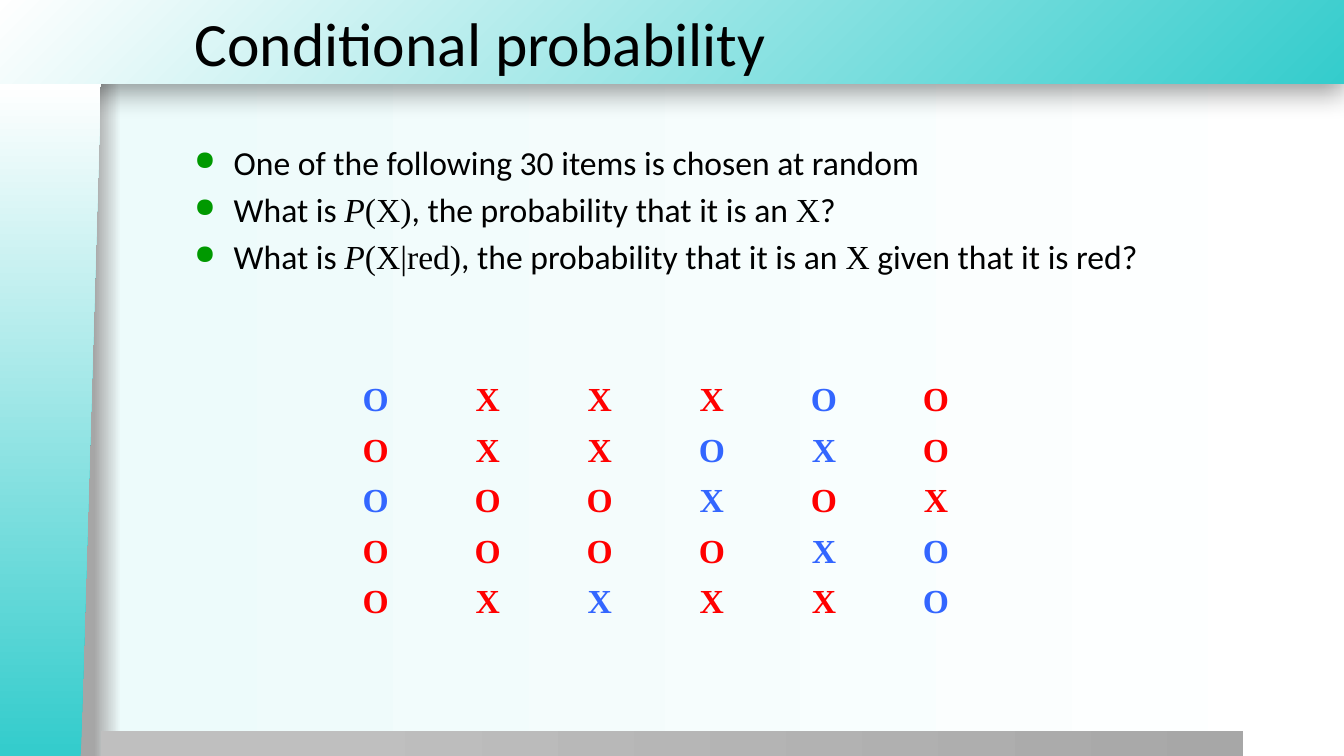
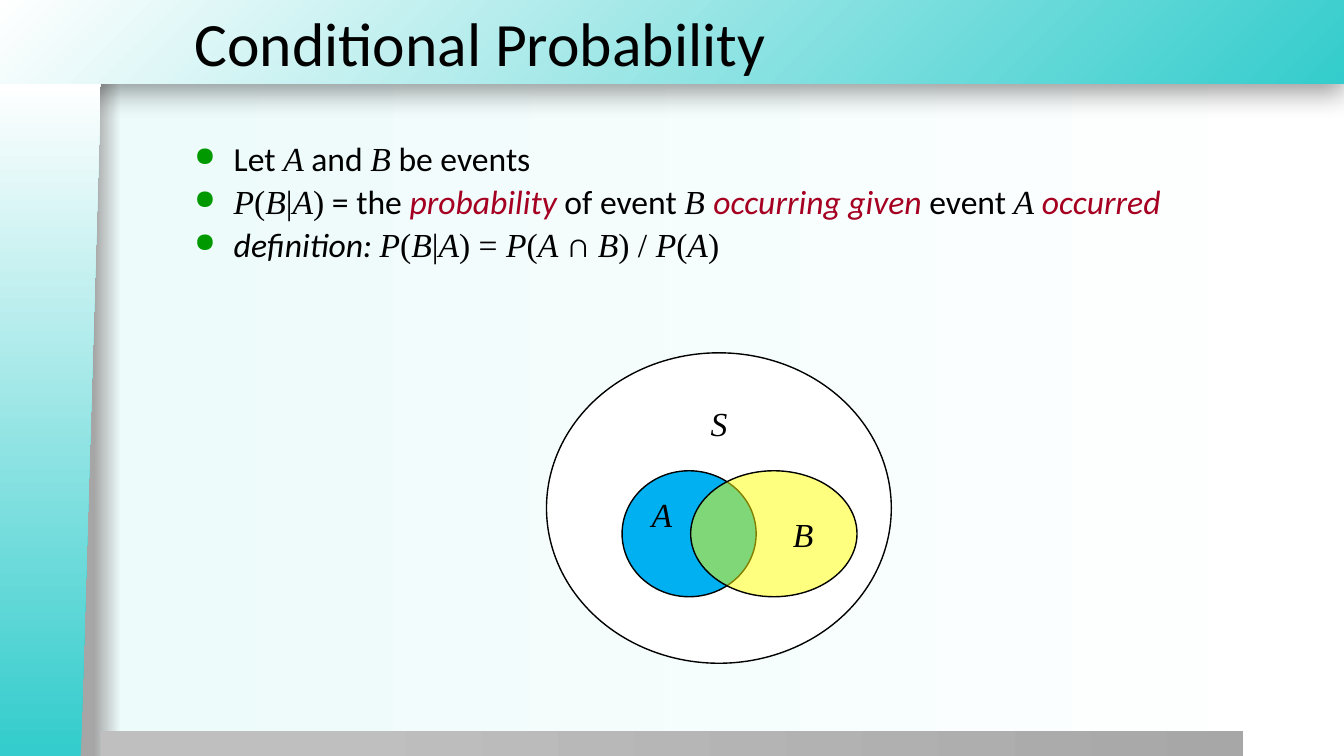
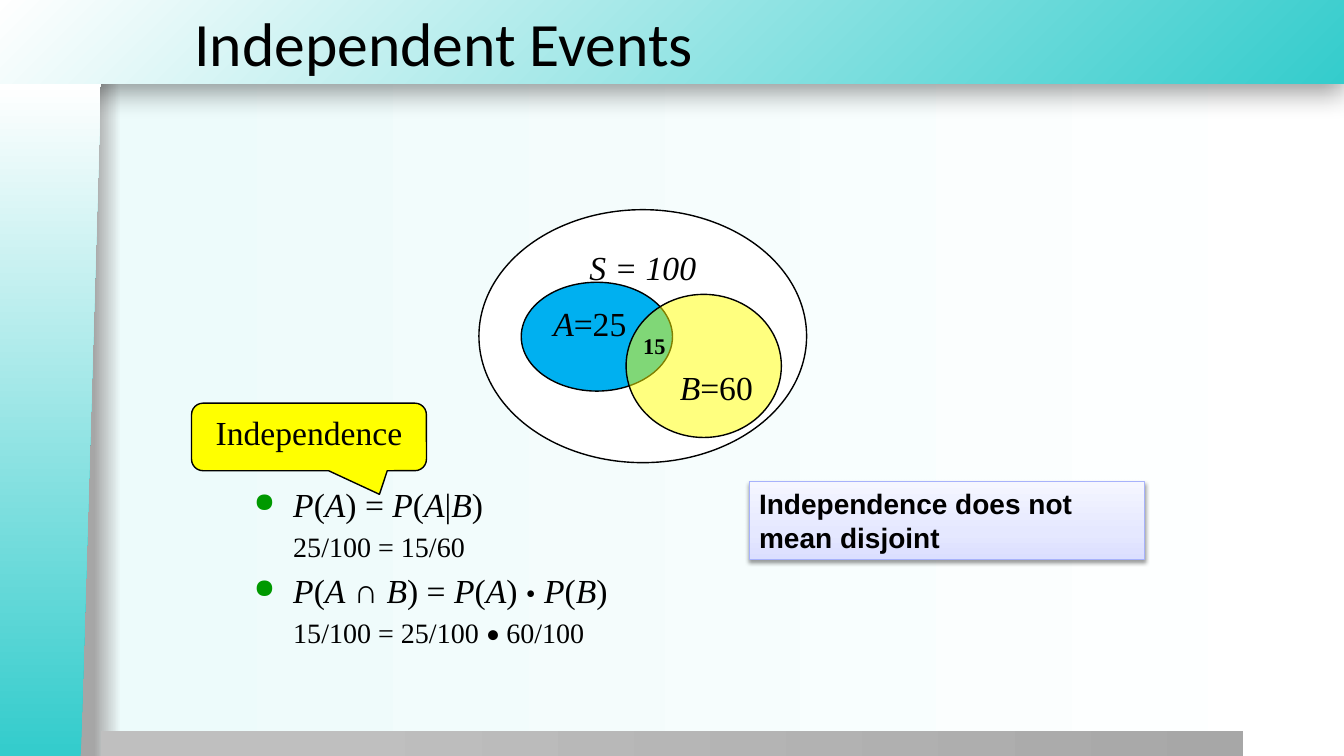
from dataclasses import dataclass
from itertools import groupby

from lxml.etree import SubElement
from pptx import Presentation
from pptx.dml.color import RGBColor
from pptx.enum.shapes import MSO_SHAPE as Kind
from pptx.enum.text import MSO_ANCHOR as Anchor, PP_ALIGN as Align
from pptx.oxml.ns import qn
from pptx.util import Inches, Pt

SANS, SERIF = "Calibri", "Times New Roman"
BLACK, WHITE, TEAL = "000000", "FFFFFF", "34CCCC"
RED, BLUE, WINE, GREEN = "FF0000", "3366FF", "A50021", "009900"
SKY, YELLOW = "00B0F0", "FFFF00"
INSETS = (0.1, 0.05, 0.1, 0.05)


@dataclass(frozen=True)
class Run:
    text: str
    font: str = SANS
    italic: bool = False
    color: str = BLACK
    size: float = 24
    bold: bool = False


@dataclass(frozen=True)
class Line:
    runs: list[Run]
    bullet: bool = True


@dataclass(frozen=True)
class Box:
    left: float
    top: float
    width: float
    height: float

    def place(self) -> tuple:
        return tuple(map(Inches, (self.left, self.top, self.width, self.height)))


@dataclass(frozen=True)
class Oval:
    box: Box
    fill: str
    label: list[Run]
    align: Align = Align.CENTER
    anchor: Anchor = Anchor.TOP
    insets: tuple = INSETS
    alpha: int = 100
    wrap: bool = True


# Run builders
def math(text: str, size: float = 24) -> list[Run]:
    """Capital letters are italic variables, all else is upright."""
    return [Run("".join(part), SERIF, upper, size=size)
            for upper, part in groupby(text, str.isupper)]


def serif(text: str, size: float = 24) -> Run:
    return Run(text, SERIF, size=size)


def slant(text: str) -> Run:
    return Run(text, SERIF, True)


def stress(text: str) -> Run:
    return Run(text, italic=True, color=WINE)


# Colour and XML helpers
def paint(text: str) -> RGBColor:
    return RGBColor.from_string(text)


def add(parent, tag: str, **attrs):
    return SubElement(parent, qn(tag), {key: str(val) for key, val in attrs.items()})


def blend(fill, root, stops: list, angle: int = 0, corner: bool = False) -> None:
    fill.gradient()
    node = root.find(".//" + qn("a:gradFill"))
    for child in list(node):
        node.remove(child)
    steps = add(node, "a:gsLst")
    for spot, color in stops:
        add(add(steps, "a:gs", pos=spot * 1000), "a:srgbClr", val=color)
    if corner:
        add(add(node, "a:path", path="circle"), "a:fillToRect", l=100000, t=100000)
    else:
        add(node, "a:lin", ang=angle * 60000, scaled=0)


def shade(shape, alpha: int, blur: float, dist: float) -> None:
    effect = shape.element.spPr.find(qn("a:effectLst"))
    outer = add(effect, "a:outerShdw", blurRad=int(Pt(blur)), dist=int(Pt(dist)),
                dir=5400000, algn="t", rotWithShape=0)
    add(add(outer, "a:srgbClr", val=BLACK), "a:alpha", val=alpha * 1000)


# Text
def fill_runs(para, runs: list[Run]) -> None:
    for item in runs:
        run = para.add_run()
        run.text = item.text
        font = run.font
        font.name, font.size = item.font, Pt(item.size)
        font.italic, font.bold = item.italic, item.bold
        font.color.rgb = paint(item.color)


def set_frame(frame, anchor: Anchor = Anchor.TOP, insets: tuple = INSETS,
              wrap: bool = True) -> None:
    frame.word_wrap, frame.vertical_anchor = wrap, anchor
    (frame.margin_left, frame.margin_top,
     frame.margin_right, frame.margin_bottom) = map(Inches, insets)


def write(slide, box: Box, runs: list[Run], anchor: Anchor = Anchor.TOP) -> None:
    frame = slide.shapes.add_textbox(*box.place()).text_frame
    set_frame(frame, anchor)
    fill_runs(frame.paragraphs[0], runs)


def add_body(slide, box: Box, lines: list[Line], spacing: float = 1.0) -> None:
    frame = slide.shapes.add_textbox(*box.place()).text_frame
    set_frame(frame)
    for index, line in enumerate(lines):
        para = frame.add_paragraph() if index else frame.paragraphs[0]
        fill_runs(para, line.runs)
        para.line_spacing = spacing
        props = para._p.get_or_add_pPr()
        indent = int(Inches(0.39))
        props.set("marL", str(indent))
        props.set("indent", str(-indent if line.bullet else 0))
        add(add(props, "a:spcBef"), "a:spcPct", val=20000)
        if line.bullet:
            add(add(props, "a:buClr"), "a:srgbClr", val=GREEN)
            add(props, "a:buSzPct", val=80000)
            add(props, "a:buChar", char="●")


# Shapes
def add_shape(slide, kind: Kind, box: Box, fill: str = "", line: str = "",
              weight: float = 1):
    shape = slide.shapes.add_shape(kind, *box.place())
    shape.shadow.inherit = False
    if fill:
        shape.fill.solid()
        shape.fill.fore_color.rgb = paint(fill)
    if line:
        shape.line.color.rgb = paint(line)
        shape.line.width = Pt(weight)
    else:
        shape.line.fill.background()
    return shape


def label(shape, runs: list[Run], align: Align = Align.CENTER,
          anchor: Anchor = Anchor.TOP, insets: tuple = INSETS,
          wrap: bool = True) -> None:
    set_frame(shape.text_frame, anchor, insets, wrap)
    para = shape.text_frame.paragraphs[0]
    para.alignment = align
    fill_runs(para, runs)


def add_oval(slide, oval: Oval) -> None:
    shape = add_shape(slide, Kind.OVAL, oval.box, oval.fill, BLACK)
    if oval.alpha < 100:
        color = shape.element.spPr.find(qn("a:solidFill")).find(qn("a:srgbClr"))
        add(color, "a:alpha", val=oval.alpha * 1000)
    label(shape, oval.label, oval.align, oval.anchor, oval.insets, oval.wrap)


# Shared look: background, bands and title
def add_slide(deck, title: str):
    slide = deck.slides.add_slide(deck.slide_layouts[6])
    blend(slide.background.fill, slide.element,
          [(7, "A6A6A6"), (9, "EDFBFB"), (100, WHITE)])

    top = add_shape(slide, Kind.RECTANGLE, Box(-0.01, 0, 13.34, 0.83))
    blend(top.fill, top.element, [(0, TEAL), (100, WHITE)], corner=True)
    shade(top, 40, 20, 6)

    foot = add_shape(slide, Kind.RECTANGLE, Box(1, 7.25, 11.33, 0.26))
    blend(foot.fill, foot.element, [(20, "BFBFBF"), (100, "A7A7A7")])

    side = add_shape(slide, Kind.FLOWCHART_MANUAL_INPUT, Box(-2.84, 3.67, 6.68, 1))
    side.rotation = 270
    side.element.spPr.find(qn("a:xfrm")).set("flipV", "1")
    blend(side.fill, side.element, [(1, TEAL), (100, WHITE)])

    write(slide, Box(1.83, 0, 11.51, 0.83), [Run(title, size=44)], Anchor.MIDDLE)
    return slide


BODY = Box(1.83, 1.36, 10.5, 5.79)


# Slide 1: items to choose from
def add_items(slide) -> None:
    rows = ["oXXXoO", "OXXoxO", "oOOxOX", "OOOOxo", "OXxXXo"]  # lower case is blue
    box = Box(3.17, 3.74, 6.67, 0.41 * len(rows))
    table = slide.shapes.add_table(len(rows), len(rows[0]), *box.place()).table
    table.first_row = table.horz_banding = False
    style = table._tbl.tblPr.find(qn("a:tableStyleId"))
    style.text = "{2D5ABB26-0587-4C30-8999-92F81FD0307C}"
    for r, row in enumerate(rows):
        for c, mark in enumerate(row):
            cell = table.cell(r, c)
            cell.fill.background()
            para = cell.text_frame.paragraphs[0]
            para.alignment = Align.CENTER
            color = BLUE if mark.islower() else RED
            fill_runs(para, [Run(mark.upper(), SERIF, color=color, bold=True)])


def draw_items(deck) -> None:
    slide = add_slide(deck, "Conditional probability")
    chance = Run(", the probability that it is an ")
    add_body(slide, BODY, [
        Line([Run("One of the following 30 items is chosen at random")]),
        Line([Run("What is "), slant("P"), serif("(X)"), chance, serif("X"), Run("?")]),
        Line([Run("What is "), slant("P"), serif("(X|red)"), chance, serif("X"),
              Run(" given that it is red?")]),
    ])
    add_items(slide)


# Slide 2: definition
def draw_given(deck) -> None:
    slide = add_slide(deck, "Conditional Probability")
    add_body(slide, BODY, [
        Line([Run("Let "), slant("A"), Run(" and "), slant("B"), Run(" be events")]),
        Line([*math("P(B|A)"), Run(" = the "), stress("probability"),
              Run(" of event "), slant("B "), stress("occurring given"),
              Run(" event "), slant("A "), stress("occurred")]),
        Line([Run("definition: ", italic=True), *math("P(B|A) = P(A "), Run("∩ "),
              *math("B) / P(A)")]),
    ], spacing=0.9)
    for oval in (
        Oval(Box(5.42, 3.5, 3.42, 3.08), WHITE, [slant("S")]),
        Oval(Box(6.17, 4.67, 1.33, 1.25), SKY, [slant("A")], Align.LEFT),
        Oval(Box(6.85, 4.67, 1.65, 1.25), YELLOW, [slant("B")], anchor=Anchor.MIDDLE,
             insets=(0.68, 0.05, 0.1, 0.05), alpha=50),
    ):
        add_oval(slide, oval)


# Slide 3: independence
def draw_free(deck) -> None:
    slide = add_slide(deck, "Independent Events")
    add_body(slide, Box(2.42, 4.75, 8.5, 2.4), [
        Line(math("P(A) = P(A|B)")),
        Line([serif("25/100 = 15/60", 20)], bullet=False),
        Line([*math("P(A ∩ B) = P(A) "), serif("•", 20), *math(" P(B)")]),
        Line([serif("15/100 = 25/100 ", 20), Run("• ", size=20), serif("60/100", 20)],
             bullet=False),
    ])
    for oval in (
        Oval(Box(4.75, 2.08, 3.25, 2.51), WHITE, [slant("S = 100")],
             insets=(0.1, 0, 0.1, 0.59), wrap=False),
        Oval(Box(5.17, 2.8, 1.5, 1.08), SKY, math("A=25"), Align.LEFT),
        Oval(Box(6.21, 2.92, 1.54, 1.42), YELLOW, math("B=60"), anchor=Anchor.MIDDLE,
             insets=(0.25, 0.46, 0, 0.05), alpha=50),
    ):
        add_oval(slide, oval)
    write(slide, Box(6.28, 3.25, 0.61, 0.37), [Run("15", SERIF, size=16, bold=True)])

    callout = add_shape(slide, Kind.ROUNDED_RECTANGULAR_CALLOUT,
                        Box(1.9, 4, 2.33, 0.67), YELLOW, BLACK)
    for index, value in enumerate((0.3, 0.85, 0.17)):
        callout.adjustments[index] = value
    label(callout, [serif("Independence")])

    note = add_shape(slide, Kind.RECTANGLE, Box(7.43, 4.78, 3.92, 0.77),
                     line="A7B2FB", weight=0.75)
    blend(note.fill, note.element,
          [(0, "DBDFFF"), (35, "E5E8FF"), (100, "F5F6FF")], angle=270)
    shade(note, 38, 3.1, 1.6)
    label(note, [Run("Independence does not mean disjoint", "Arial", size=20, bold=True)],
          Align.LEFT)


def main() -> None:
    deck = Presentation()
    deck.slide_width, deck.slide_height = Inches(13.33), Inches(7.5)
    for draw in (draw_items, draw_given, draw_free):
        draw(deck)
    deck.save("out.pptx")


if __name__ == "__main__":
    main()
